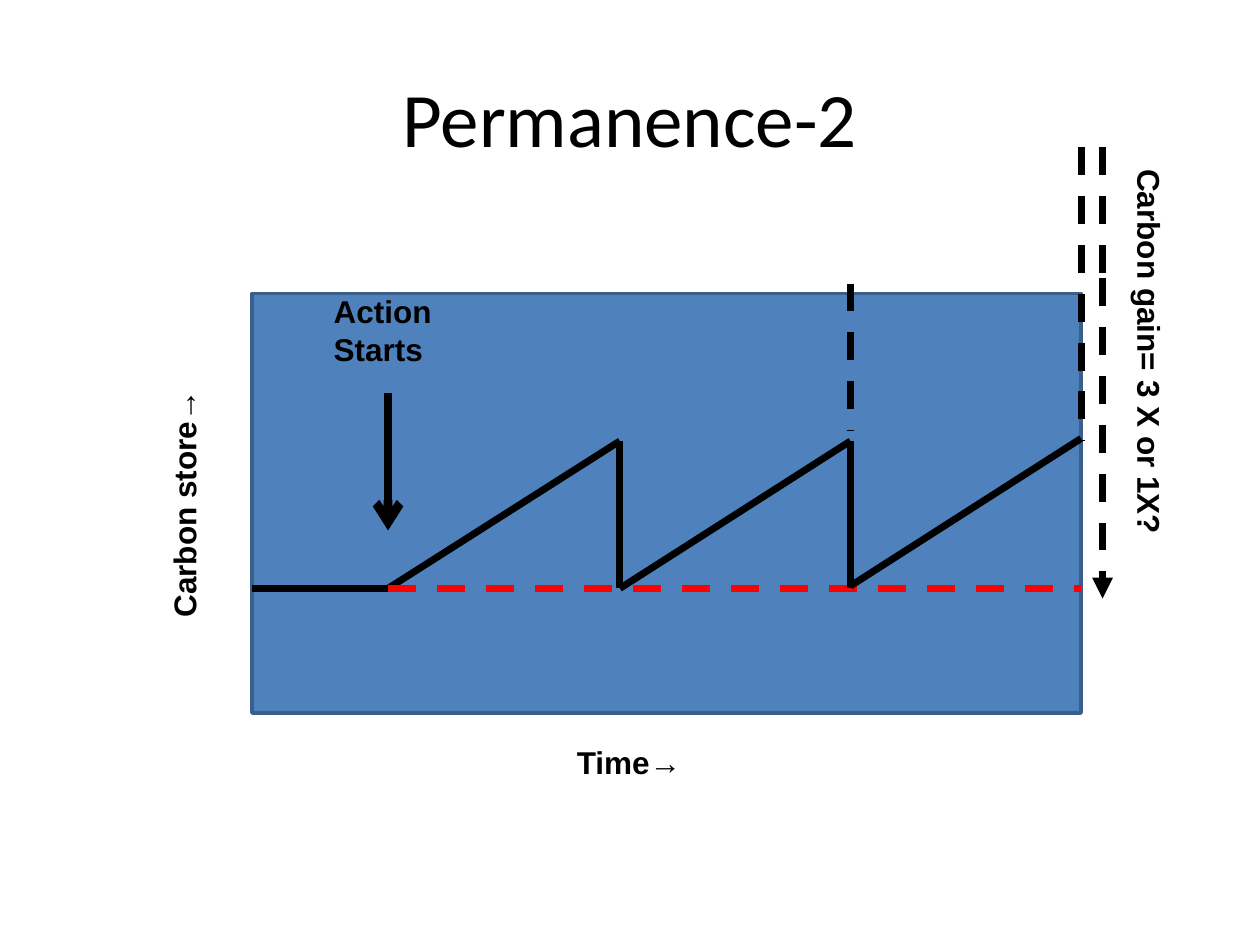
from lxml.etree import SubElement
from pptx import Presentation
from pptx.dml.color import RGBColor
from pptx.enum.dml import MSO_LINE
from pptx.enum.shapes import MSO_CONNECTOR, MSO_SHAPE
from pptx.enum.text import MSO_ANCHOR, MSO_AUTO_SIZE, PP_ALIGN
from pptx.oxml.ns import qn
from pptx.util import Inches, Pt

BLACK, RED = "000000", "FF0000"
PLOT_FILL, PLOT_EDGE = "4F81BD", "3A5F8C"


def color(hex_string):
    return RGBColor.from_string(hex_string)


class Diagram:
    """Holds the text style and the page being drawn."""

    def __init__(self, page, font="Arial", size=18):
        self.page = page
        self.font = font
        self.size = size

    def add_span(self, para, text, font, size, bold):
        span = para.add_run()
        span.text = text
        span.font.name = font
        span.font.size = Pt(size)
        span.font.bold = bold
        span.font.color.rgb = color(BLACK)

    def title(self, text):
        box = self.page.shapes.title
        box.left, box.top = Inches(0.5), Inches(0.3)
        box.width, box.height = Inches(9), Inches(1.25)
        box.text_frame.vertical_anchor = MSO_ANCHOR.MIDDLE
        para = box.text_frame.paragraphs[0]
        para.alignment = PP_ALIGN.CENTER
        self.add_span(para, text, "Calibri", 44, False)

    def rectangle(self, left, top, width, height):
        box = self.page.shapes.add_shape(
            MSO_SHAPE.RECTANGLE, Inches(left), Inches(top), Inches(width), Inches(height))
        box.shadow.inherit = False
        box.fill.solid()
        box.fill.fore_color.rgb = color(PLOT_FILL)
        box.line.color.rgb = color(PLOT_EDGE)
        box.line.width = Pt(2)

    def label(self, lines, left, top, width, height, rotation=0):
        box = self.page.shapes.add_textbox(
            Inches(left), Inches(top), Inches(width), Inches(height))
        box.rotation = rotation
        frame = box.text_frame
        frame.word_wrap = False
        frame.auto_size = MSO_AUTO_SIZE.SHAPE_TO_FIT_TEXT
        for index, text in enumerate(lines):
            para = frame.add_paragraph() if index else frame.paragraphs[0]
            self.add_span(para, text, self.font, self.size, True)

    def line(self, start, end, stroke=BLACK, width=4, dashed=False, arrowhead=None):
        x1, y1, x2, y2 = (Inches(value) for value in (*start, *end))
        link = self.page.shapes.add_connector(MSO_CONNECTOR.STRAIGHT, x1, y1, x2, y2)
        link.line.color.rgb = color(stroke)
        link.line.width = Pt(width)
        if dashed:
            link.line.dash_style = MSO_LINE.DASH
        properties = link.element.spPr
        if arrowhead:
            SubElement(properties.find(qn("a:ln")), qn("a:tailEnd"), type=arrowhead)
        SubElement(properties, qn("a:effectLst"))


def main():
    deck = Presentation()
    deck.slide_width, deck.slide_height = Inches(10), Inches(7.5)
    diagram = Diagram(deck.slides.add_slide(deck.slide_layouts[5]))

    left, right = 2, 8.58
    start, first_loss, second_loss = 3.08, 4.92, 6.75
    baseline, peak = 4.67, 3.5
    gain = 8.75

    diagram.title("Permanence-2")
    diagram.rectangle(left, 2.33, right - left, 3.33)
    diagram.label(["Time→"], 4.48, 5.85, 1.03, 0.4)
    diagram.label(["Carbon store→"], 0.45, 3.79, 2.02, 0.4, rotation=270)
    diagram.label(["Action", "Starts"], 2.55, 2.27, 1.06, 0.71)
    diagram.label(["Carbon gain= 3 X or 1X?"], 7.56, 2.61, 3.13, 0.4, rotation=90)
    diagram.line((start, 3.12), (start, 4.21), width=5, arrowhead="arrow")

    # Carbon store: level, then growth lost at the end of each cycle
    diagram.line((left, baseline), (start, baseline))
    diagram.line((start, baseline), (first_loss, peak))
    diagram.line((start, baseline), (right, baseline), RED, dashed=True)
    diagram.line((first_loss, peak), (first_loss, baseline))
    diagram.line((second_loss, 4.65), (right, 3.48))
    diagram.line((first_loss, baseline), (second_loss, peak))
    diagram.line((second_loss, peak), (second_loss, baseline))

    # Dashed guides: x, top, bottom
    guides = [
        (gain, 2.21, 3.37), (gain, 1.17, 2.17), (second_loss, 2.25, 3.42),
        (right, 2.33, peak), (right, 1.17, 2.33),
    ]
    for x, top, bottom in guides:
        diagram.line((x, top), (x, bottom), dashed=True)
    diagram.line((gain, 3.37), (gain, 4.75), dashed=True, arrowhead="triangle")

    deck.save("out.pptx")


if __name__ == "__main__":
    main()
